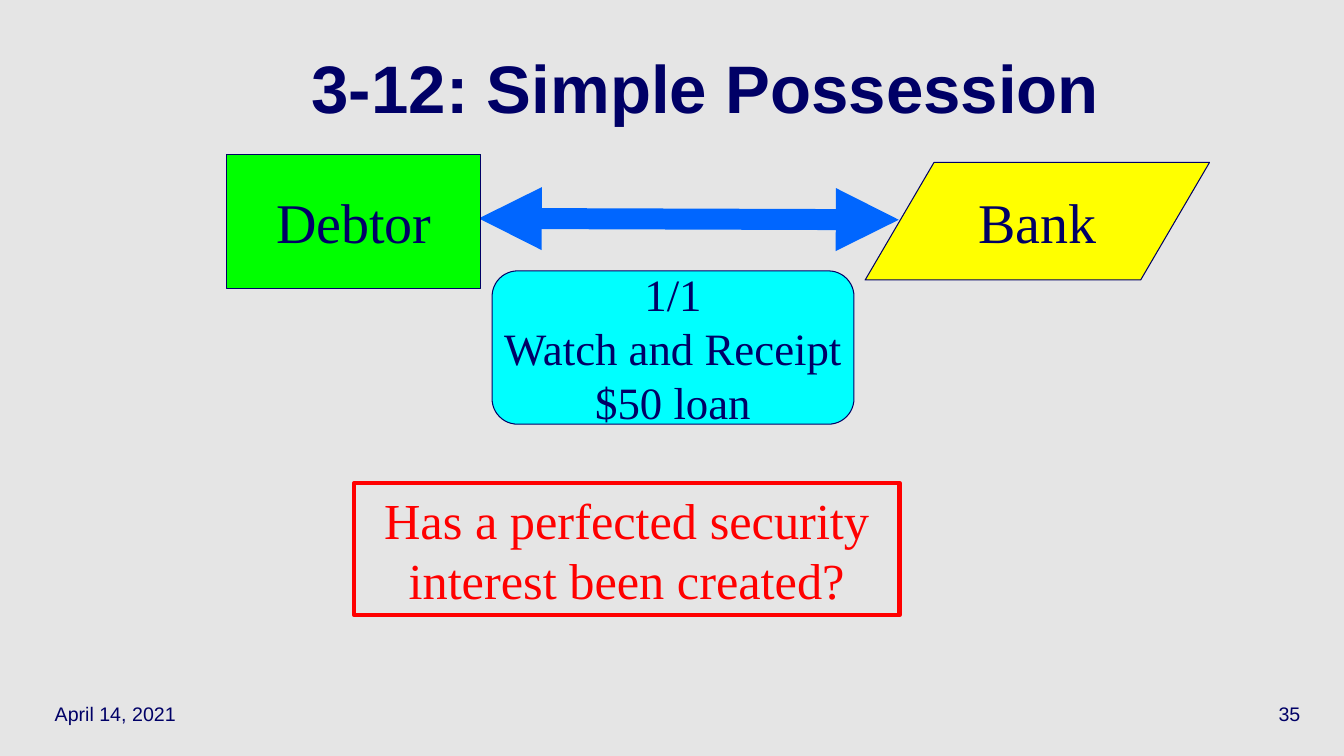
from lxml import etree
from pptx import Presentation
from pptx.dml.color import RGBColor
from pptx.enum.shapes import MSO_CONNECTOR, MSO_SHAPE
from pptx.enum.text import MSO_ANCHOR, PP_ALIGN
from pptx.oxml.ns import qn
from pptx.util import Pt

COLORS = {
    "background": "E5E5E5",
    "navy": "000066",
    "blue": "0066FF",
    "green": "00FF00",
    "yellow": "FFFF00",
    "cyan": "00FFFF",
    "red": "FF0000",
}


def rgb(name):
    return RGBColor.from_string(COLORS[name])


def write(s, lines, font, size, color, align=PP_ALIGN.CENTER, wrap=False):
    """Fill a shape with one paragraph per line, centred vertically."""
    tf = s.text_frame
    tf.word_wrap = wrap
    tf.vertical_anchor = MSO_ANCHOR.MIDDLE
    tf.text = "\n".join(lines)
    for p in tf.paragraphs:
        p.alignment = align
        p.font.name = font
        p.font.size = Pt(size)
        p.font.color.rgb = rgb(color)


prs = Presentation()
prs.slide_width, prs.slide_height = Pt(960), Pt(540)
slide = prs.slides.add_slide(prs.slide_layouts[5])
slide.background.fill.solid()
slide.background.fill.fore_color.rgb = rgb("background")

# Title
title = slide.shapes.title
title.left, title.top, title.width, title.height = Pt(64), Pt(24), Pt(880), Pt(90)
write(title, ["3‑12: Simple Possession"], "Arial", 48, "navy", wrap=True)
title.text_frame.paragraphs[0].font.bold = True
title.text_frame.paragraphs[0].line_spacing = 0.7

# Date and slide number
for text, left, align in [
    ("April 14, 2021", 32, PP_ALIGN.LEFT),
    ("35", 736, PP_ALIGN.RIGHT),
]:
    s = slide.shapes.add_textbox(Pt(left), Pt(492), Pt(200), Pt(36))
    write(s, [text], "Arial", 14, "navy", align, wrap=True)

# Exchange between debtor and bank
arrow = slide.shapes.add_connector(
    MSO_CONNECTOR.STRAIGHT, Pt(342), Pt(156), Pt(642), Pt(157)
)
arrow.line.color.rgb = rgb("blue")
arrow.line.width = Pt(15)
ln = arrow.line._get_or_add_ln()
for end in ("a:headEnd", "a:tailEnd"):
    etree.SubElement(ln, qn(end), type="triangle")
etree.SubElement(arrow._element.spPr, qn("a:effectLst"))

# Parties, terms and question
for kind, box, fill, line, width, lines, size, color in [
    (MSO_SHAPE.FLOWCHART_DATA, (618, 116, 246, 84),
     "yellow", "navy", 0.75, ["Bank"], 40, "navy"),
    (MSO_SHAPE.FLOWCHART_ALTERNATE_PROCESS, (351.5, 193.5, 258.5, 109.5),
     "cyan", "navy", 0.75, ["1/1", "Watch and Receipt", "$50 loan"], 32, "navy"),
    (MSO_SHAPE.RECTANGLE, (253, 345, 389.5, 94.5),
     None, "red", 3, ["Has a perfected security interest been created?"], 36, "red"),
    (MSO_SHAPE.RECTANGLE, (162, 110, 181.5, 96),
     "green", "navy", 0.75, ["Debtor"], 40, "navy"),
]:
    s = slide.shapes.add_shape(kind, *map(Pt, box))
    s.shadow.inherit = False
    if fill:
        s.fill.solid()
        s.fill.fore_color.rgb = rgb(fill)
    else:
        s.fill.background()
    s.line.color.rgb = rgb(line)
    s.line.width = Pt(width)
    write(s, lines, "Times New Roman", size, color, wrap=fill is None)

prs.save("out.pptx")
